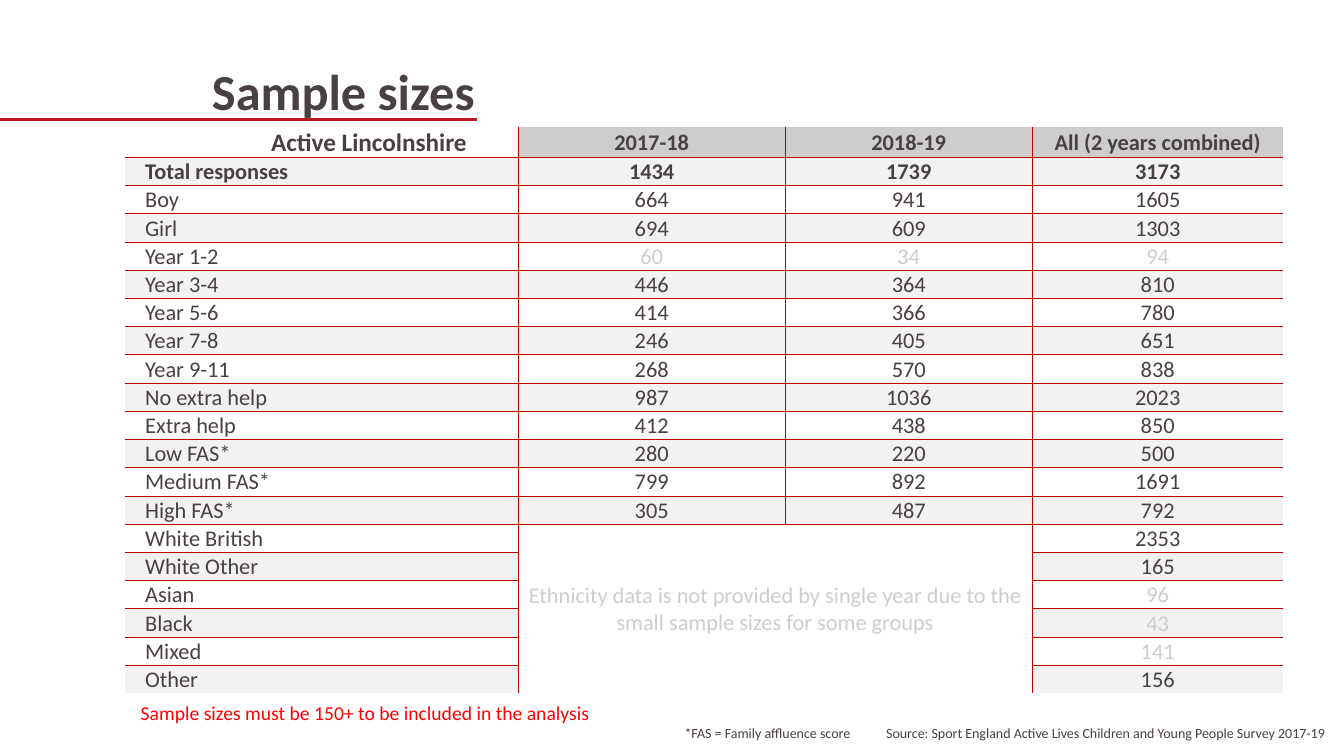
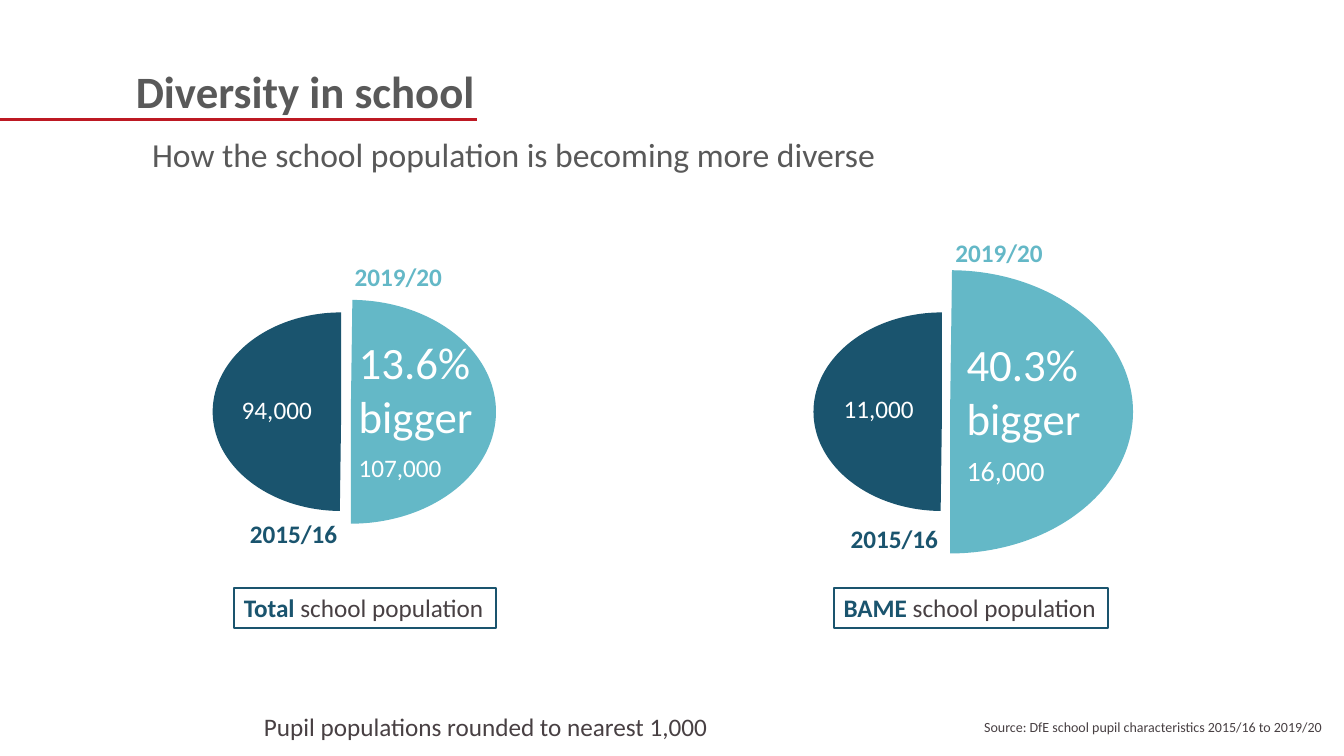
from lxml import etree
from pptx import Presentation
from pptx.dml.color import RGBColor
from pptx.enum import shapes, text
from pptx.oxml import ns
from pptx.util import Inches, Pt

HUES = {
    "ink": "484043", "slate": "595959", "red": "BD1923", "edge": "C00000",
    "warn": "FF0000", "head": "CDCDCD", "band": "F2F2F2", "white": "FFFFFF",
    "navy": "1A546E", "sky": "64B8C7",
}
LEFT, MID, RIGHT = text.PP_ALIGN.LEFT, text.PP_ALIGN.CENTER, text.PP_ALIGN.RIGHT

ROWS = [
    ("", "2017-18", "2018-19", "All (2 years combined)"),
    ("Total responses", 1434, 1739, 3173),
    ("Boy", 664, 941, 1605),
    ("Girl", 694, 609, 1303),
    ("Year 1-2", 60, 34, 94),
    ("Year 3-4", 446, 364, 810),
    ("Year 5-6", 414, 366, 780),
    ("Year 7-8", 246, 405, 651),
    ("Year 9-11", 268, 570, 838),
    ("No extra help", 987, 1036, 2023),
    ("Extra help", 412, 438, 850),
    ("Low FAS*", 280, 220, 500),
    ("Medium FAS*", 799, 892, 1691),
    ("High FAS*", 305, 487, 792),
    ("White British", "Ethnicity data is not provided by single year due to the "
     "small sample sizes for some groups", "", 2353),
    ("White Other", "", "", 165),
    ("Asian", "", "", 96),
    ("Black", "", "", 43),
    ("Mixed", "", "", 141),
    ("Other", "", "", 156),
]
NOTE = 14
LEAST = 150

GROUPS = [
    dict(name="Total", mid=33.85, gap=0.95, size=(28.8, 22.2), rise="13.6%",
         old="94,000", new="107,000", small=18, talk=(34.6, 32.7), past=(23, 38.6),
         late=(34.2, 25.4), soon=(23.8, 50.9), tag=(23.2, 26)),
    dict(name="BAME", mid=93.45, gap=0.8, size=(36.3, 28.1), rise="40.3%",
         old="11,000", new="16,000", small=20, talk=(94.9, 32.9), past=(82.7, 38.5),
         late=(93.8, 23.1), soon=(83.4, 51.4), tag=(82.7, 27.2)),
]


def hue(name):
    return RGBColor.from_string(HUES[name])


def cell(n):
    return Inches(n / 10)


class Deck:
    def __init__(self):
        self.show = Presentation()
        self.show.slide_width, self.show.slide_height = cell(133.33), cell(75)

    def page(self, title, size, tint):
        self.slide = self.show.slides.add_slide(self.show.slide_layouts[6])
        self.rule(0, 11.9, 47.3)
        box = self.words(0.8, 4.9, 47.3, 8.8, title, size, tint, RIGHT, bold=True)
        box.text_frame.vertical_anchor = text.MSO_ANCHOR.MIDDLE
        box.text_frame.paragraphs[0].line_spacing = 0.9

    def rule(self, x, y, w):
        line = self.slide.shapes.add_connector(
            shapes.MSO_CONNECTOR.STRAIGHT, cell(x), cell(y), cell(x + w), cell(y))
        line.line.color.rgb = hue("red")
        line.line.width = Pt(2.25)
        etree.SubElement(line._element.spPr, ns.qn("a:effectLst"))

    def run(self, para, words, size, tint, bold=False):
        part = para.add_run()
        part.text = words
        style = {"name": "Calibri", "size": Pt(size), "bold": bold}
        for key, value in style.items():
            setattr(part.font, key, value)
        part.font.color.rgb = hue(tint)

    def words(self, x, y, w, h, words, size, tint="ink", side=LEFT, bold=False):
        box = self.slide.shapes.add_textbox(cell(x), cell(y), cell(w), cell(h))
        box.text_frame.word_wrap = True
        para = box.text_frame.paragraphs[0]
        para.alignment = side
        self.run(para, words, size, tint, bold)
        return box

    def add(self, box, words, size, tint, gap=0):
        para = box.text_frame.add_paragraph()
        para.space_before = Pt(gap)
        self.run(para, words, size, tint)

    def form(self, kind, x, y, w, h):
        item = self.slide.shapes.add_shape(kind, cell(x), cell(y), cell(w), cell(h))
        item.shadow.inherit = False
        return item

    def half(self, mid, size, tint, turn=0):
        w, h = size
        item = self.form(shapes.MSO_SHAPE.PIE, mid - w / 2, 40.85 - h / 2, w, h)
        item.adjustments[0], item.adjustments[1] = 54.47, 162
        item.rotation = turn
        item.fill.solid()
        item.fill.fore_color.rgb = hue(tint)
        item.line.fill.background()

    def tag(self, x, w, name):
        item = self.form(shapes.MSO_SHAPE.RECTANGLE, x, 58.3, w, 4)
        item.fill.background()
        item.line.color.rgb = hue("navy")
        item.line.width = Pt(1.5)
        para = item.text_frame.paragraphs[0]
        para.alignment = LEFT
        self.run(para, name, 18, "navy", True)
        self.run(para, " school population", 18, "ink")

    def edges(self, box, sides):
        props = box._tc.get_or_add_tcPr()
        for side in "LRTB":
            line = etree.SubElement(props, ns.qn(f"a:ln{side}"), w=str(Pt(0.5)))
            if side in sides:
                fill = etree.SubElement(line, ns.qn("a:solidFill"))
                etree.SubElement(fill, ns.qn("a:srgbClr"), val=HUES["edge"])
            else:
                etree.SubElement(line, ns.qn("a:noFill"))

    def sides(self, r, c):
        if r >= NOTE and c in (1, 2):
            return "LTR" if (r, c) == (NOTE, 1) else "LR"[c - 1]
        last = len(ROWS) - 1
        return "L" * (c > 0) + "R" * (c < 3) + "T" * (r > 0) + "B" * (r < last)

    def table(self, x, y, cols, top, high):
        count = len(ROWS)
        grid = self.slide.shapes.add_table(
            count, len(cols), cell(x), cell(y), cell(sum(cols)),
            cell(top + high * (count - 1))).table
        grid.first_row = grid.horz_banding = False
        for col, wide in zip(grid.columns, cols):
            col.width = cell(wide)
        for r, row in enumerate(ROWS):
            grid.rows[r].height = cell(high if r else top)
            for c, value in enumerate(row):
                self.fill(grid.cell(r, c), r, c, value)
        grid.cell(NOTE, 1).merge(grid.cell(count - 1, 2))

    def fill(self, box, r, c, value):
        note = r >= NOTE and c in (1, 2)
        form = {"margin_left": cell(0.1 if c else 2), "margin_right": cell(0.1),
                "margin_top": cell(0.1), "margin_bottom": 0,
                "vertical_anchor": text.MSO_ANCHOR.MIDDLE}
        for key, item in form.items():
            setattr(box, key, item)
        self.edges(box, self.sides(r, c))
        if note or (r % 2 == 0 and (r or not c)):
            box.fill.background()
        else:
            box.fill.solid()
            box.fill.fore_color.rgb = hue("band" if r else "head")
        para = box.text_frame.paragraphs[0]
        para.alignment = MID if c else LEFT
        if value == "":
            para._p.get_or_add_endParaRPr().set("sz", "1600")
            return
        pale = note or (isinstance(value, int) and value < LEAST)
        self.run(para, str(value), 16, "head" if pale else "ink", r < 2)


def main():
    deck = Deck()
    deck.page("Sample sizes", 36, "ink")
    deck.table(12.4, 12.6, (39, 26.5, 24.5, 24.9), 3, 2.8)
    deck.words(59.5, 71.4, 72.9, 2.7, "*FAS = Family affluence score\tSource: Sport England "
               "Active Lives Children and Young People Survey 2017-19", 10, side=RIGHT)
    deck.words(0, 69, 59.5, 3.4, "Sample sizes must be 150+ to be included in the analysis",
               14, "warn", RIGHT)
    deck.words(0.8, 12, 46.5, 4, "Active Lincolnshire", 18, side=RIGHT, bold=True)

    deck.page("Diversity in school", 32, "slate")
    deck.words(14.1, 12.8, 98.5, 5, "How the school population is becoming more diverse",
               24, "slate")
    for g in GROUPS:
        deck.half(g["mid"], (25.5, 19.7), "navy")
        deck.half(g["mid"] + g["gap"], g["size"], "sky", 180)
        deck.words(*g["soon"], 12.7, 4, "2015/16", 18, "navy", bold=True)
        deck.words(*g["late"], 12.7, 4, "2019/20", 18, "sky", bold=True)
        deck.words(*g["past"], 9.4, 4, g["old"], 18, "white")
        talk = deck.words(*g["talk"], 16.1, 16.2, g["rise"], 32, "white")
        deck.add(talk, "bigger", 32, "white")
        deck.add(talk, g["new"], g["small"], "white", 7)
        deck.tag(*g["tag"], g["name"])
    deck.words(25.2, 70.1, 48, 4, "Pupil populations rounded to nearest 1,000", 18)
    deck.words(84.1, 70.8, 48, 2.7,
               "Source: DfE school pupil characteristics 2015/16 to 2019/20", 10, side=RIGHT)
    deck.show.save("out.pptx")


if __name__ == "__main__":
    main()
